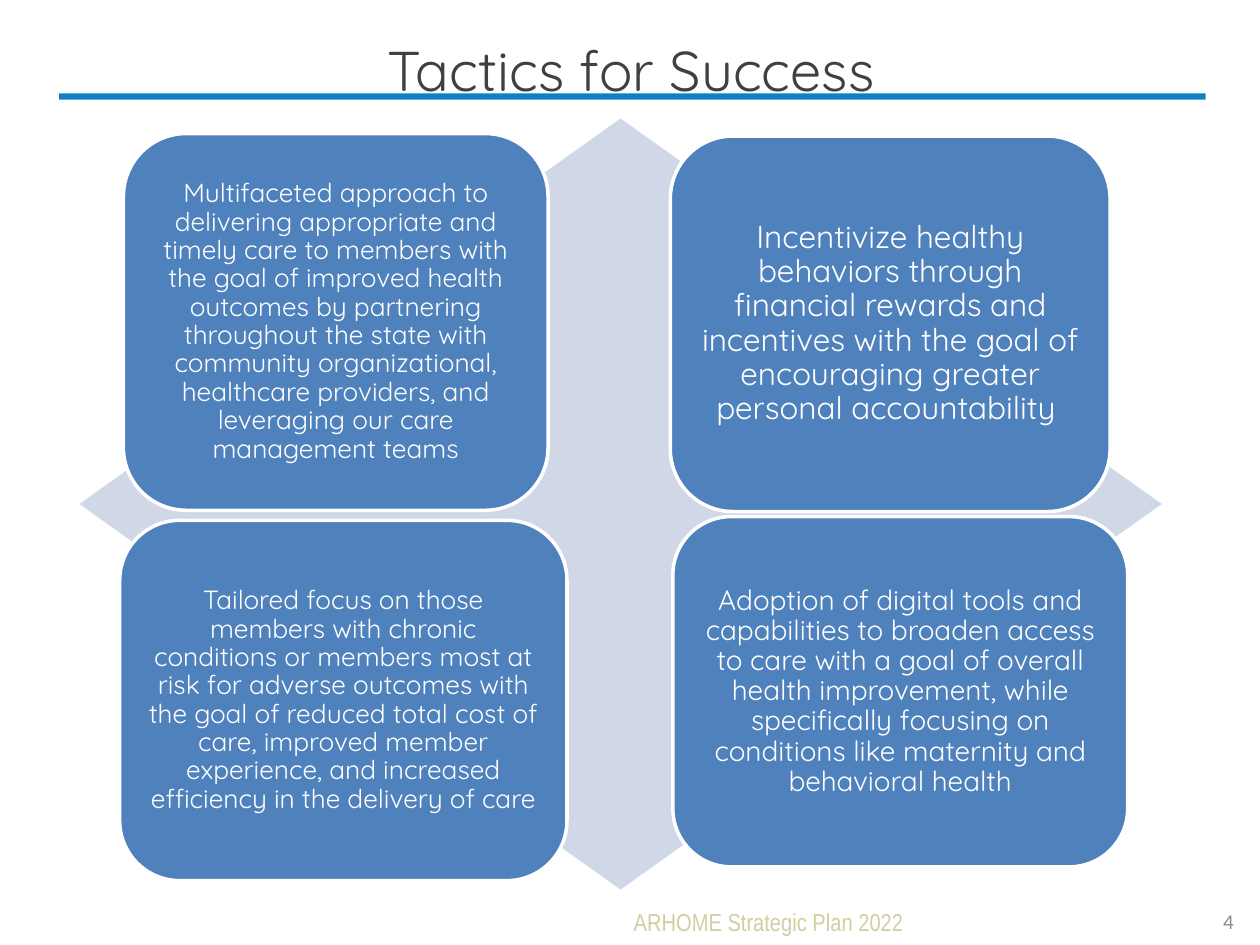
from pptx import Presentation, util as u
from pptx.dml.color import RGBColor
from pptx.enum import shapes, text

WHITE = RGBColor(0xFF, 0xFF, 0xFF)
BAR_BLUE = RGBColor(0x10, 0x7F, 0xC4)
CARD_BLUE = RGBColor(0x4F, 0x81, 0xBD)
PALE_BLUE = RGBColor(0xD0, 0xD8, 0xE8)
DARK = RGBColor(0x40, 0x40, 0x40)
GREY = RGBColor(0x8C, 0x8C, 0x8C)
SAND = RGBColor(0xD4, 0xCD, 0xA2)

COLS, ROWS = 100, 75
CELL = u.Inches(0.1)

TACTICS = [
    ((9.8, 10.6, 33.7, 29.9), 15, 0.06,
     "Multifaceted approach to delivering appropriate and timely care to members "
     "with the goal of improved health outcomes by partnering throughout the state "
     "with community organizational, healthcare providers, and leveraging our care "
     "management teams"),
    ((53.2, 10.8, 34.9, 29.8), 18, 0.07,
     "Incentivize healthy behaviors through financial rewards and incentives with "
     "the goal of encouraging greater personal accountability "),
    ((9.5, 41.3, 35.5, 28.6), 15, 0.06,
     "Tailored focus on those members with chronic conditions or members most at "
     "risk for adverse outcomes with the goal of reduced total cost of care, "
     "improved member experience, and increased efficiency in the delivery of care"),
    ((53.4, 41, 36.1, 27.8), 16, 0.07,
     "Adoption of digital tools and capabilities to broaden access to care with a "
     "goal of overall health improvement, while specifically focusing on conditions "
     "like maternity and behavioral health"),
]


def grid(box):
    return [int(n * CELL) for n in box]


def write(tf, words, font, size, color, align, anchor=text.MSO_ANCHOR.MIDDLE):
    tf.word_wrap = True
    tf.auto_size = text.MSO_AUTO_SIZE.NONE
    tf.vertical_anchor = anchor
    p = tf.paragraphs[0]
    p.text = words
    p.alignment = align
    p.font.name = font
    p.font.size = u.Pt(size)
    p.font.color.rgb = color
    return p


def add_title(s, box, words):
    sp = s.shapes.title
    sp.left, sp.top, sp.width, sp.height = grid(box)
    write(sp.text_frame, words, "Quicksand", 32, DARK,
          text.PP_ALIGN.CENTER, text.MSO_ANCHOR.TOP)


def add_block(s, kind, box, fill):
    sp = s.shapes.add_shape(kind, *grid(box))
    sp.shadow.inherit = False
    sp.fill.solid()
    sp.fill.fore_color.rgb = fill
    sp.line.fill.background()
    return sp


def add_card(s, box, size, inset, words):
    sp = add_block(s, shapes.MSO_SHAPE.ROUNDED_RECTANGLE, box, CARD_BLUE)
    sp.line.color.rgb = WHITE
    sp.line.width = u.Pt(2)
    tf = sp.text_frame
    tf.margin_left = tf.margin_right = u.Inches(inset)
    tf.margin_top = tf.margin_bottom = u.Inches(inset)
    p = write(tf, words, "Quicksand", size, WHITE, text.PP_ALIGN.CENTER)
    p.line_spacing = 0.9


def add_label(s, box, words, font, size, color, align):
    tf = s.shapes.add_textbox(*grid(box)).text_frame
    write(tf, words, font, size, color, align)


def main():
    prs = Presentation()
    prs.slide_width, prs.slide_height = COLS * CELL, ROWS * CELL
    s = prs.slides.add_slide(prs.slide_layouts[5])
    add_title(s, (3.9, 2.3, 92.4, 7), "Tactics for Success")
    add_block(s, shapes.MSO_SHAPE.RECTANGLE, (4.7, 7.4, 91, 0.5), BAR_BLUE)
    add_block(s, shapes.MSO_SHAPE.DIAMOND, (6.3, 9.4, 85.9, 61.2), PALE_BLUE)
    for tactic in TACTICS:
        add_card(s, *tactic)
    add_label(s, (35.4, 71.8, 51.2, 2.7), "ARHOME Strategic Plan 2022",
              "Arial Narrow", 14, SAND, text.PP_ALIGN.CENTER)
    add_label(s, (94.2, 72.1, 4.7, 2), "4", "Calibri", 12, GREY,
              text.PP_ALIGN.RIGHT)
    prs.save("out.pptx")


if __name__ == "__main__":
    main()
